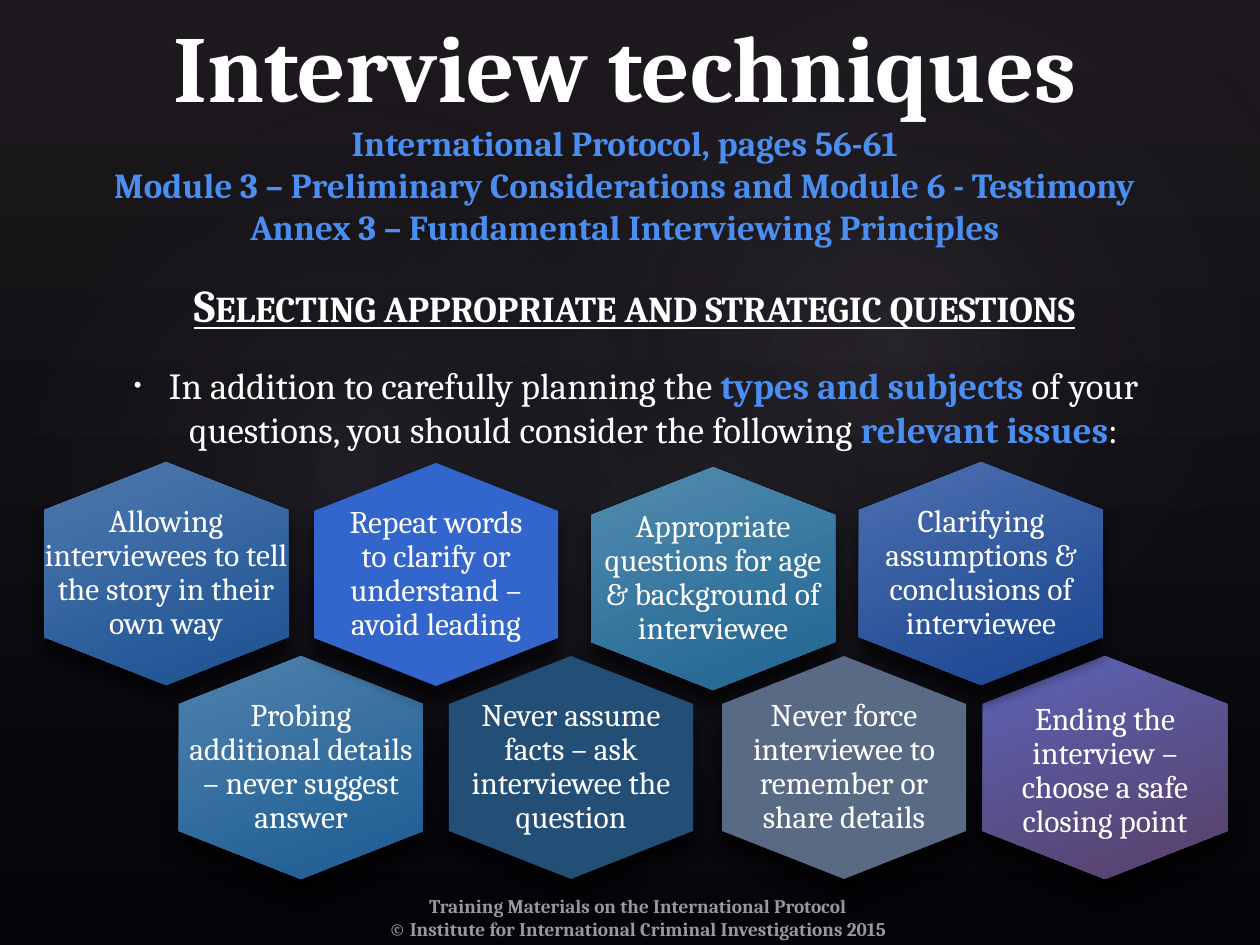
from copy import deepcopy

from pptx import Presentation
from pptx.dml.color import RGBColor
from pptx.enum.shapes import MSO_SHAPE
from pptx.enum.text import MSO_ANCHOR, MSO_AUTO_SIZE, PP_ALIGN
from pptx.oxml import parse_xml
from pptx.oxml.ns import nsdecls
from pptx.util import Emu, Pt

SCALE = 914400 / 126  # EMU per px
COLORS = {
    "white": "FFFFFF", "accent": "4A8EF2", "footer": "999999",
    "top": "1D191E", "bottom": "040408", "glow": "C4BCC6", "glow_edge": "242852",
}


def px(length):
    return Emu(round(length * SCALE))


def add_text(para, text, color, **values):
    """Add a centred Cambria run with the given font values."""
    para.alignment = PP_ALIGN.CENTER
    span = para.add_run()
    span.text = text
    span.font.color.rgb = RGBColor.from_string(COLORS[color])
    for name, value in {"name": "Cambria", **values}.items():
        setattr(span.font, name, value)
    return span


deck = Presentation()
deck.slide_width, deck.slide_height = px(1260), px(945)
page = deck.slides.add_slide(deck.slide_layouts[5])
shapes = page.shapes

# Background: dark gradient with three soft glows
backdrop = page.background.fill
backdrop.gradient()
backdrop.gradient_angle = 270
for stop, name in zip(backdrop.gradient_stops, ("top", "bottom")):
    stop.color.rgb = RGBColor.from_string(COLORS[name])

glows = [
    (189, 144, 998, 786, 328.7, 7),
    (-38, 161, 764, 617, 294.3, 8),
    (451, 16, 893, 655, 328.7, 8),
]
for left, top, width, height, angle, opacity in glows:
    glow = shapes.add_shape(MSO_SHAPE.OVAL, px(left), px(top), px(width), px(height))
    glow.rotation = angle
    glow.shadow.inherit = False
    glow.line.fill.background()
    glow.fill.background()
    properties = glow._element.spPr
    properties.replace(properties.find("{*}noFill"), parse_xml(
        f'<a:gradFill {nsdecls("a")}><a:gsLst>'
        f'<a:gs pos="0"><a:srgbClr val="{COLORS["glow"]}"><a:alpha val="{opacity * 1000}"/></a:srgbClr></a:gs>'
        f'<a:gs pos="58000"><a:srgbClr val="{COLORS["glow_edge"]}"><a:alpha val="0"/></a:srgbClr></a:gs>'
        '</a:gsLst><a:path path="circle"><a:fillToRect l="50000" t="50000" r="50000" b="50000"/></a:path>'
        '</a:gradFill>'))

# Title, in front of the glows
title = shapes.title
shapes._spTree.append(title._element)
title.left, title.top, title.width, title.height = px(64), px(16), px(1122), px(238)
frame = title.text_frame
frame.auto_size = MSO_AUTO_SIZE.NONE
frame.vertical_anchor = MSO_ANCHOR.BOTTOM
para = frame.paragraphs[0]
span = add_text(para, "Interview techniques", "white", size=Pt(54), bold=True)
for line in (
    "International Protocol, pages 56-61",
    "Module 3 – Preliminary Considerations and Module 6 - Testimony",
    "Annex 3 – Fundamental Interviewing Principles",
):
    para.add_line_break()
    para._p[-1].append(deepcopy(span._r.rPr))
    span = add_text(para, line, "accent", size=Pt(20), bold=True)

# Footer
footer = shapes.add_textbox(px(323), px(888), px(630), px(50)).text_frame
footer.word_wrap = True
for para, line in (
    (footer.paragraphs[0], "Training Materials on the International Protocol"),
    (footer.add_paragraph(), "© Institute for International Criminal Investigations 2015"),
):
    add_text(para, line, "footer", size=Pt(11), bold=True)

# Heading and introduction
body = shapes.add_textbox(px(44), px(265), px(1181), px(198)).text_frame
body.word_wrap = True
body.vertical_anchor = MSO_ANCHOR.MIDDLE
heading = add_text(body.paragraphs[0], "Selecting appropriate and strategic questions",
                   "white", size=Pt(26), bold=True, underline=True)
heading._r.rPr.set("cap", "small")

intro = body.add_paragraph()
intro.space_before = Pt(18)
for text, color, bold in (
    ("In addition to carefully planning the ", "white", False),
    ("types and subjects ", "accent", True),
    ("of your questions, you should consider the following ", "white", False),
    ("relevant issues", "accent", True),
    (":", "white", False),
):
    add_text(intro, text, color, size=Pt(21), bold=bold)
settings = intro._p.get_or_add_pPr()
settings.set("marL", str(px(38)))
settings.set("indent", str(px(-35)))
for bullet in ('buSzPct {} val="60000"', 'buFont {} typeface="Arial"', 'buChar {} char="•"'):
    settings.append(parse_xml(f'<a:{bullet.format(nsdecls("a"))}/>'))

# Hexagons: left, top, side inset, top inset, fill colours, text
HEX_WIDTH, HEX_HEIGHT, SHOULDER = 244, 223, 48
hexagons = [
    (983, 656, 10, 40, ["5C64B7", "573F65"], "Ending the interview – choose a safe closing point"),
    (859, 462, 10, 33, ["4C6FAD", "194491"], "Clarifying assumptions & conclusions of interviewee"),
    (44, 462, 0, 33, ["4E79AE", "1B5091"], "Allowing interviewees to tell the story in their own way"),
    (179, 656, 10, 33, ["4F82AE", "1C5B91"], "Probing additional details – never suggest answer"),
    (591, 467, 0, 33, ["528BAF", "1F6591"], "Appropriate questions for age & background of interviewee"),
    (314, 463, 20, 33, ["3366CC"], "Repeat words to clarify or understand – avoid leading"),
    (449, 656, 20, 33, ["234F77"], "Never assume facts – ask interviewee the question"),
    (722, 656, 10, 33, ["596A85"], "Never force interviewee to remember or share details"),
]
for left, top, side, inset, fills, text in hexagons:
    right, middle = left + HEX_WIDTH, left + HEX_WIDTH / 2
    upper, lower, bottom = top + SHOULDER, top + HEX_HEIGHT - SHOULDER, top + HEX_HEIGHT
    outline = shapes.build_freeform(middle, top, scale=SCALE)
    outline.add_line_segments([(right, upper), (right, lower), (middle, bottom),
                               (left, lower), (left, upper)], close=True)
    hexagon = outline.convert_to_shape()
    hexagon.line.fill.background()
    if len(fills) == 1:
        hexagon.fill.solid()
        hexagon.fill.fore_color.rgb = RGBColor.from_string(fills[0])
    else:
        hexagon.fill.gradient()
        hexagon.fill.gradient_angle = 291
        for stop, color in zip(hexagon.fill.gradient_stops, fills):
            stop.color.rgb = RGBColor.from_string(color)
    hexagon.shadow.inherit = False
    hexagon._element.spPr.find("{*}effectLst").append(parse_xml(
        f'<a:outerShdw {nsdecls("a")} blurRad="{Pt(9)}" dist="{Pt(9)}" dir="5400000" rotWithShape="0">'
        '<a:srgbClr val="000000"><a:alpha val="70000"/></a:srgbClr></a:outerShdw>'))
    frame = hexagon.text_frame
    for name, value in {
        "word_wrap": True, "vertical_anchor": MSO_ANCHOR.MIDDLE,
        "margin_left": px(side), "margin_right": px(side),
        "margin_top": px(inset), "margin_bottom": px(33),
    }.items():
        setattr(frame, name, value)
    para = frame.paragraphs[0]
    para.line_spacing = 0.9
    add_text(para, text, "white", size=Pt(18))

deck.save("out.pptx")
